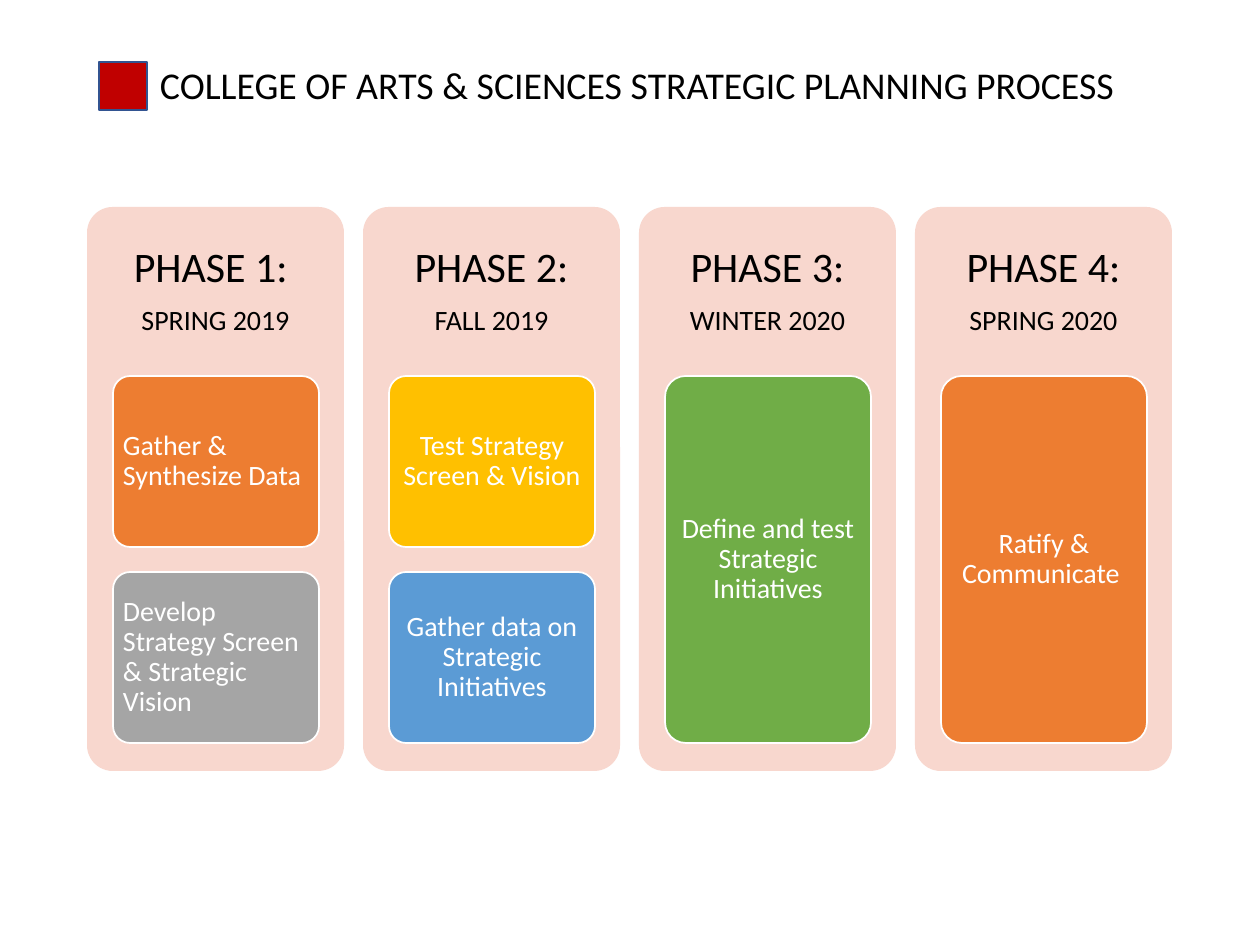
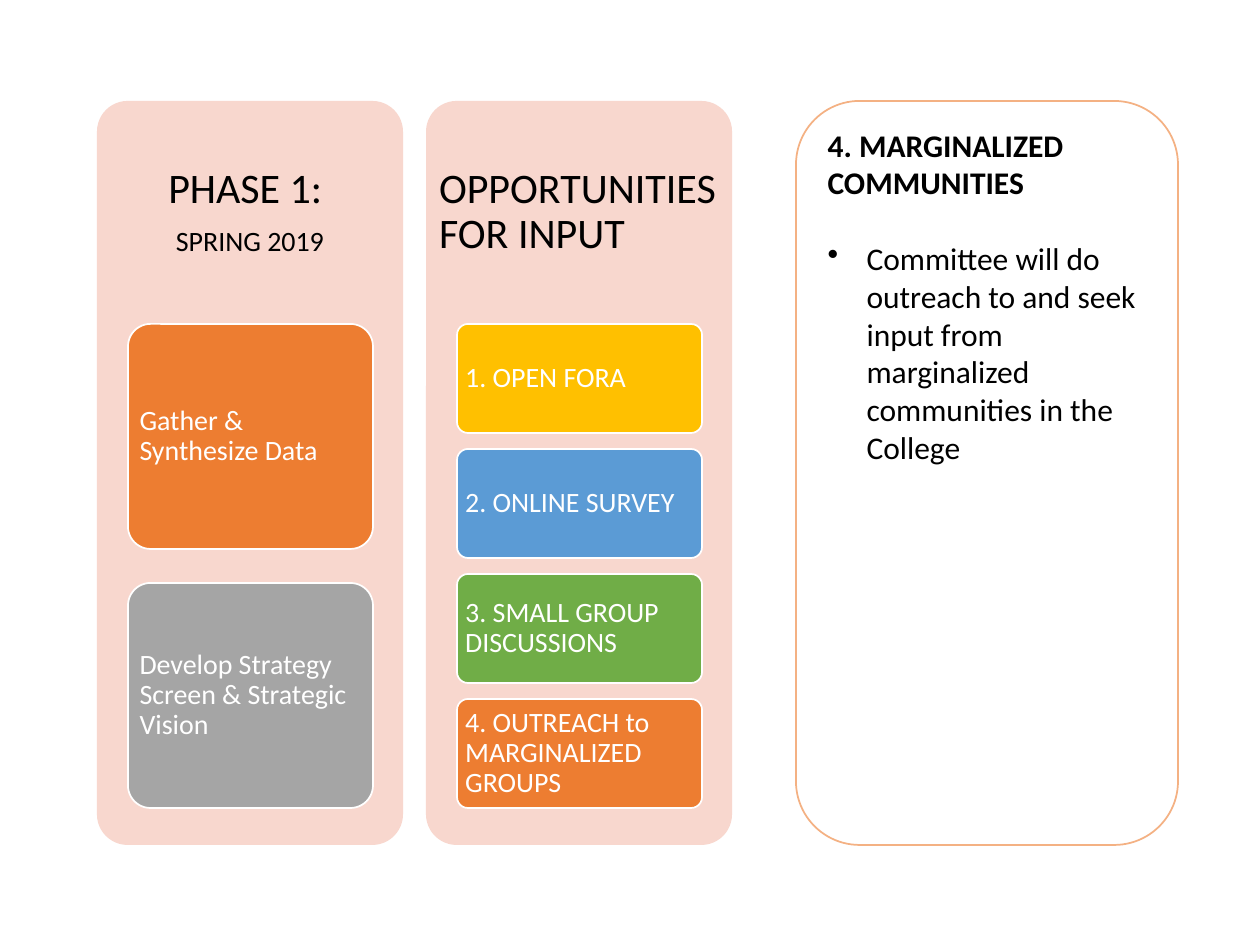
from dataclasses import dataclass

from lxml import etree
from pptx import Presentation
from pptx.dml.color import RGBColor
from pptx.enum.shapes import MSO_SHAPE
from pptx.enum.text import MSO_ANCHOR, MSO_AUTO_SIZE, PP_ALIGN
from pptx.oxml.ns import qn
from pptx.util import Emu, Pt

RECTANGLE = MSO_SHAPE.RECTANGLE
ROUNDED = MSO_SHAPE.ROUNDED_RECTANGLE
TOP, MIDDLE = MSO_ANCHOR.TOP, MSO_ANCHOR.MIDDLE
LEFT, CENTER = PP_ALIGN.LEFT, PP_ALIGN.CENTER
NO_AUTOFIT = MSO_AUTO_SIZE.NONE


@dataclass(frozen=True)
class Theme:
    font: str = "Calibri"
    black: str = "000000"
    white: str = "FFFFFF"
    panel: str = "F8D7CE"
    orange: str = "ED7D31"
    grey: str = "A5A5A5"
    gold: str = "FFC000"
    blue: str = "5B9BD5"
    green: str = "70AD47"
    red: str = "C00000"
    marker_line: str = "325491"
    detail_line: str = "F4B183"
    title_size: float = 21.6
    heading_size: int = 24
    detail_size: int = 18
    card_size: int = 16


theme = Theme()
scale = 914400 / 126


def add_shape(page, kind, area, fill, line=None, rounding=None):
    shape = page.shapes.add_shape(kind, *[Emu(round(px * scale)) for px in area])
    shape.shadow.inherit = False
    shape.fill.solid()
    shape.fill.fore_color.rgb = RGBColor.from_string(fill)
    if line:
        shape.line.color.rgb = RGBColor.from_string(line)
        shape.line.width = Pt(1)
    else:
        shape.line.fill.background()
    if rounding:
        shape.adjustments[0] = rounding
    return shape


def write_text(box, lines, color, align, anchor=MIDDLE, insets=(13, 13), spacing=0.9):
    frame = box.text_frame
    frame.word_wrap = True
    frame.auto_size = NO_AUTOFIT
    frame.vertical_anchor = anchor
    frame.margin_left = frame.margin_right = Emu(round(insets[0] * scale))
    frame.margin_top = frame.margin_bottom = Emu(round(insets[1] * scale))
    for index, (text, size) in enumerate(lines):
        para = frame.add_paragraph() if index else frame.paragraphs[0]
        para.text = text
        para.alignment = align
        para.line_spacing = spacing
        para.font.name = theme.font
        para.font.size = Pt(size)
        para.font.color.rgb = RGBColor.from_string(color)
    return frame


first_phase = (
    "PHASE 1: ", "SPRING 2019", LEFT,
    [("Gather & Synthesize Data", theme.orange),
     ("Develop Strategy Screen & Strategic Vision", theme.grey)],
)
process_panels = [
    first_phase,
    ("PHASE 2:", "FALL 2019", CENTER,
     [("Test Strategy Screen & Vision", theme.gold),
      ("Gather data on Strategic Initiatives", theme.blue)]),
    ("PHASE 3:", "WINTER 2020", CENTER,
     [("Define and test Strategic Initiatives", theme.green)]),
    ("PHASE 4:", "SPRING 2020", CENTER,
     [("Ratify & Communicate ", theme.orange)]),
]
input_panels = [
    first_phase,
    ("OPPORTUNITIES FOR INPUT", None, LEFT,
     [("1. OPEN FORA", theme.gold),
      ("2. ONLINE SURVEY", theme.blue),
      ("3. SMALL GROUP DISCUSSIONS", theme.green),
      ("4. OUTREACH to MARGINALIZED GROUPS", theme.orange)]),
]

deck = Presentation()
deck.slide_width = Emu(round(1260 * scale))
deck.slide_height = Emu(round(945 * scale))
process_page = deck.slides.add_slide(deck.slide_layouts[5])
input_page = deck.slides.add_slide(deck.slide_layouts[6])

title = process_page.shapes.title
title.left, title.top, title.width, title.height = [
    Emu(round(px * scale)) for px in (147, 54, 1026, 66)
]
write_text(
    title,
    [("COLLEGE OF ARTS & SCIENCES STRATEGIC PLANNING PROCESS", theme.title_size)],
    theme.black, LEFT, insets=(13, 6),
)

for page, panels, left, top, width, height, pitch in (
    (process_page, process_panels, 87, 207, 257, 564, 276),
    (input_page, input_panels, 97, 101, 306, 744, 329),
):
    header_height = round(height * 0.3)
    stack_height = round(height * 0.65)
    card_left = round(width * 0.1)
    card_width = round(width * 0.8)
    for column, (heading, period, card_align, cards) in enumerate(panels):
        panel_left = left + column * pitch
        add_shape(page, ROUNDED, (panel_left, top, width, height), theme.panel, rounding=0.1)
        header = page.shapes.add_textbox(
            *[Emu(round(px * scale)) for px in (panel_left, top, width, header_height)]
        )
        lines = [(heading, theme.heading_size)]
        if period:
            lines.append((period, theme.card_size))
        frame = write_text(header, lines, theme.black, CENTER if period else LEFT)
        if period:
            frame.paragraphs[0].space_after = Pt(8.4)

        card_pitch = stack_height / (len(cards) - 0.13)
        card_height = round(card_pitch * 0.87)
        for row, (text, color) in enumerate(cards):
            card_top = top + header_height + round(row * card_pitch)
            card = add_shape(
                page, ROUNDED,
                (panel_left + card_left, card_top, card_width, card_height),
                color, theme.white, 0.1,
            )
            write_text(card, [(text, theme.card_size)], theme.white, card_align, insets=(5, 4))

add_shape(process_page, RECTANGLE, (99, 62, 48, 48), theme.red, theme.marker_line)

outreach = add_shape(input_page, ROUNDED, (796, 101, 382, 744), theme.white, theme.detail_line)
frame = write_text(
    outreach,
    [("4. MARGINALIZED COMMUNITIES", theme.detail_size),
     ("Committee will do outreach to and seek input from marginalized communities in the College",
      theme.detail_size)],
    theme.black, LEFT, TOP, (13, 6), 1.0,
)
heading, bullet = frame.paragraphs
heading.font.bold = True
bullet.space_before = Pt(21.6)
properties = bullet.font._element.getparent()
properties.set("marL", str(round(39 * scale)))
properties.set("indent", str(-round(39 * scale)))
marker = etree.Element(qn("a:buChar"), char="•")
properties.insert(list(properties).index(bullet.font._element), marker)

deck.save("out.pptx")
